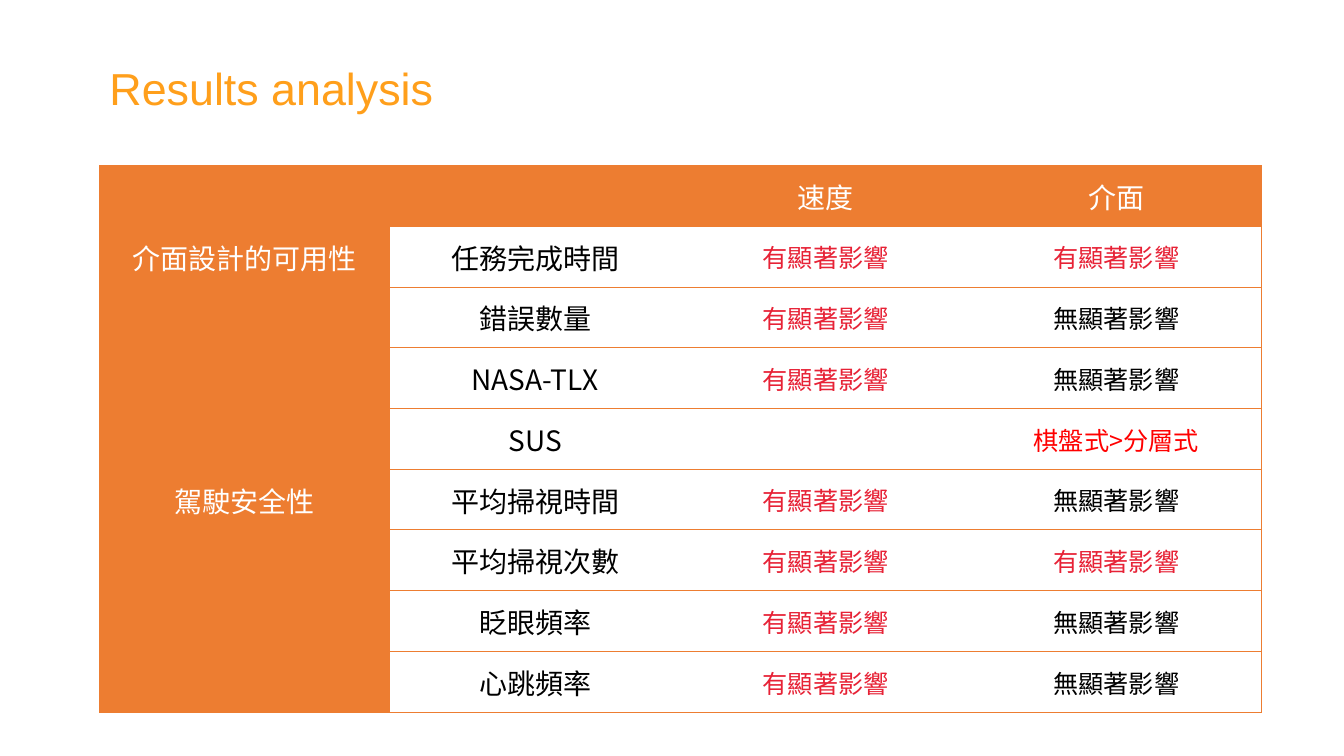
"""Build the results analysis slide with its table of effects."""
import dataclasses

import lxml.etree
import pptx
import pptx.dml.color
import pptx.enum.text
import pptx.oxml.ns
import pptx.util

Cm = pptx.util.Cm
Pt = pptx.util.Pt
qn = pptx.oxml.ns.qn


@dataclasses.dataclass(frozen=True)
class Theme:
    gold: str = "FF9F1B"
    orange: str = "ED7D31"
    white: str = "FFFFFF"
    black: str = "000000"
    rose: str = "E72236"
    red: str = "FF0000"
    title: int = 32
    label: int = 20
    value: int = 18
    latin: str = "Arial"
    cjk: str = "Noto Sans CJK SC"
    line: float = 0.5


THEME = Theme()
YES, NO, BEST = "有顯著影響", "無顯著影響", "棋盤式>分層式"
TONES = {YES: THEME.rose, NO: THEME.black, BEST: THEME.red}
ROWS = [
    ["", "", "速度", "介面"],
    ["介面設計的可用性", "任務完成時間", YES, YES],
    ["", "錯誤數量", YES, NO],
    ["", "NASA-TLX", YES, NO],
    ["", "SUS", "", BEST],
    ["駕駛安全性", "平均掃視時間", YES, NO],
    ["", "平均掃視次數", YES, YES],
    ["", "眨眼頻率", YES, NO],
    ["", "心跳頻率", YES, NO],
]


def apply(item, values):
    for name, value in values.items():
        setattr(item, name, value)


def rgb(tone):
    return pptx.dml.color.RGBColor.from_string(tone)


def write(para, text, face, size, tone):
    run = para.add_run()
    run.text = text
    apply(run.font, {"name": face, "size": Pt(size), "bold": False})
    run.font.color.rgb = rgb(tone)
    east = lxml.etree.SubElement(run.font._element, qn("a:ea"))
    east.set("typeface", face)


def edge(cell, sides):
    """Draw the named sides of a cell and clear the others."""
    props = cell._tc.get_or_add_tcPr()
    for spot, side in enumerate("LRTB"):
        line = lxml.etree.Element(qn(f"a:ln{side}"), w=str(Pt(THEME.line)))
        if side in sides:
            fill = lxml.etree.SubElement(line, qn("a:solidFill"))
            lxml.etree.SubElement(fill, qn("a:srgbClr"), val=THEME.orange)
        else:
            lxml.etree.SubElement(line, qn("a:noFill"))
        props.insert(spot, line)


def paint(cell, text, row, col):
    """Fill, border and write one cell according to its place."""
    head = row == 0 or col == 0
    apply(cell, {
        "margin_left": Cm(0.02), "margin_right": Cm(0.02),
        "margin_top": Cm(0.02), "margin_bottom": 0,
        "vertical_anchor": pptx.enum.text.MSO_ANCHOR.MIDDLE,
    })
    if head:
        cell.fill.solid()
        cell.fill.fore_color.rgb = rgb(THEME.orange)
    else:
        cell.fill.background()
    edge(cell, "TB" + {0: "L", len(ROWS[0]) - 1: "R"}.get(col, ""))
    if text:
        para = cell.text_frame.paragraphs[0]
        para.alignment = pptx.enum.text.PP_ALIGN.CENTER
        tone = THEME.white if head else TONES.get(text, THEME.black)
        size = THEME.value if text in TONES else THEME.label
        write(para, text, THEME.cjk, size, tone)


def title(slide, text):
    box = slide.shapes.add_textbox(Cm(2.51), Cm(1.4), Cm(8.74), Cm(1.63))
    apply(box.text_frame, {
        "word_wrap": False,
        "auto_size": pptx.enum.text.MSO_AUTO_SIZE.SHAPE_TO_FIT_TEXT,
    })
    write(box.text_frame.paragraphs[0], text, THEME.latin, THEME.title, THEME.gold)


def table(slide, rows):
    wide, high = Cm(7.32), Cm(1.53)
    count = len(rows[0])
    grid = slide.shapes.add_table(
        len(rows), count, Cm(2.51), Cm(4.17), wide * count, high * len(rows)
    ).table
    apply(grid, {"first_row": False, "horz_banding": False})
    for row, texts in enumerate(rows):
        for col, text in enumerate(texts):
            paint(grid.cell(row, col), text, row, col)


def main():
    deck = pptx.Presentation()
    apply(deck, {"slide_width": Cm(33.87), "slide_height": Cm(19.05)})
    slide = deck.slides.add_slide(deck.slide_layouts[6])
    title(slide, "Results analysis")
    table(slide, ROWS)
    deck.save("out.pptx")


if __name__ == "__main__":
    main()
